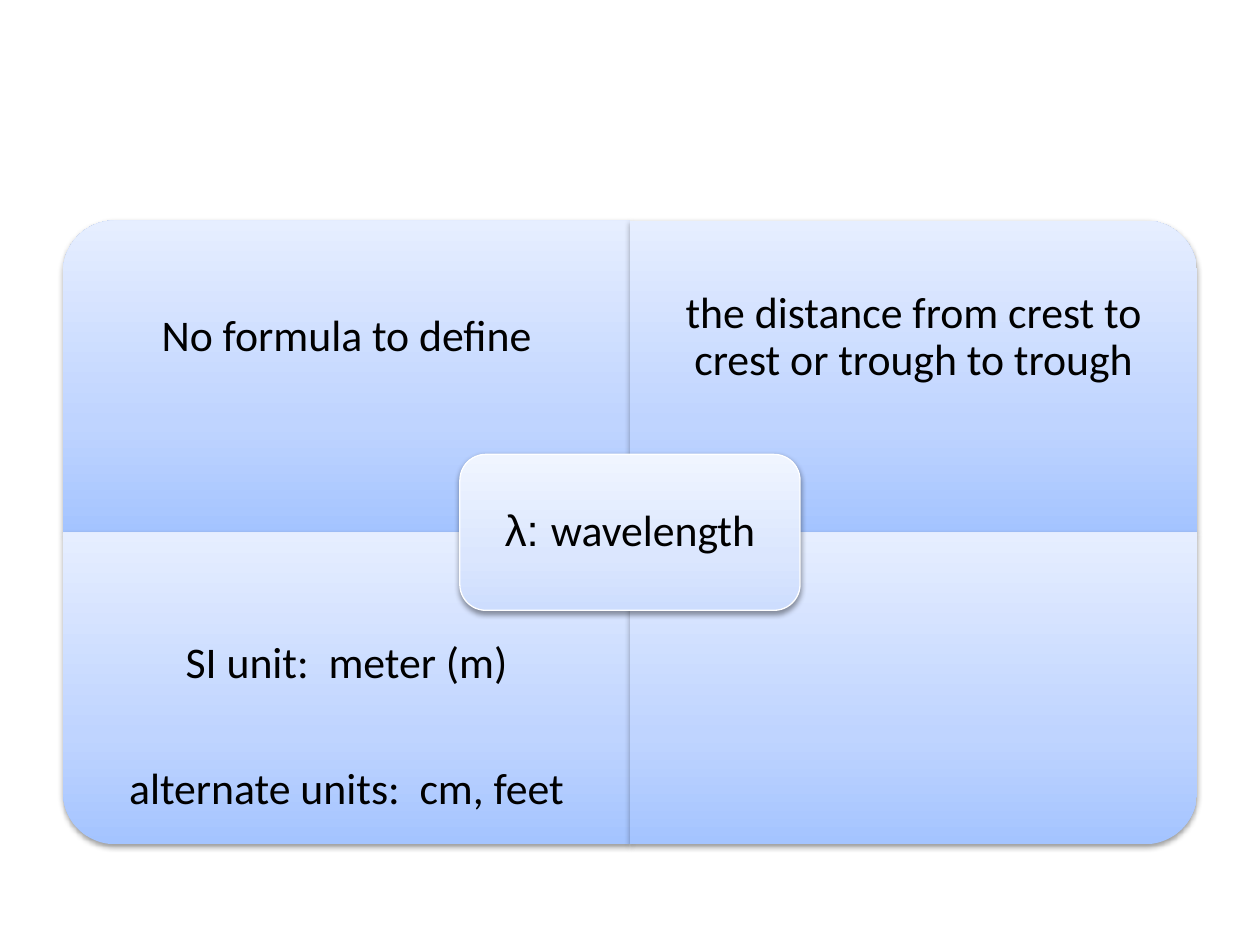
from copy import deepcopy

from lxml import etree
from pptx import Presentation
from pptx.dml.color import RGBColor
from pptx.enum.shapes import MSO_SHAPE
from pptx.enum.text import MSO_ANCHOR, PP_ALIGN
from pptx.oxml.ns import qn
from pptx.util import Pt

ROUND_ONE = MSO_SHAPE.ROUND_1_RECTANGLE
ROUND_ALL = MSO_SHAPE.ROUNDED_RECTANGLE
CENTER = PP_ALIGN.CENTER
MIDDLE = MSO_ANCHOR.MIDDLE

BLACK = RGBColor(0x00, 0x00, 0x00)
WHITE = RGBColor(0xFF, 0xFF, 0xFF)
QUADRANT_BLUES = [
    (0, RGBColor(0xA4, 0xC4, 0xFF)),
    (0.35, RGBColor(0xBF, 0xD4, 0xFF)),
    (1, RGBColor(0xE6, 0xEE, 0xFF)),
]
CENTER_BLUES = [
    (0, RGBColor(0xCD, 0xDD, 0xFE)),
    (0.35, RGBColor(0xDB, 0xE6, 0xFE)),
    (1, RGBColor(0xF0, 0xF5, 0xFF)),
]

QUADRANTS = [
    {"column": 0, "row": 0, "turn": 270, "lines": ["No formula to define"]},
    {"column": 1, "row": 0, "turn": 0,
     "lines": ["the distance from crest to crest or trough to trough"]},
    {"column": 0, "row": 1, "turn": 180,
     "lines": ["SI unit:  meter (m)", "alternate units:  cm, feet"]},
    {"column": 1, "row": 1, "turn": 90, "lines": []},
]
TERM = [("λ: ", "Arial"), ("wavelength", "Calibri")]

LEFT, TOP = 36, 126
QUADRANT_W, QUADRANT_H = 324, 178.2
TEXT_H = QUADRANT_H * 0.75
TERM_W, TERM_H = QUADRANT_W * 0.6, QUADRANT_H / 2


def write_text(frame, paragraphs, size=25, color=BLACK, inset=13.7, gap=44.5):
    frame.word_wrap = True
    frame.vertical_anchor = MIDDLE
    frame.margin_left = frame.margin_right = Pt(inset)
    frame.margin_top = frame.margin_bottom = Pt(inset)
    for index, runs in enumerate(paragraphs):
        paragraph = frame.add_paragraph() if index else frame.paragraphs[0]
        paragraph.alignment = CENTER
        paragraph.line_spacing = 0.9
        if index:
            paragraph.space_before = Pt(gap)
        for text, font_name in runs:
            run = paragraph.add_run()
            run.text = text
            run.font.name = font_name
            run.font.size = Pt(size)
            run.font.color.rgb = color


def add_panel(shapes, preset, left, top, width, height, blues):
    panel = shapes.add_shape(preset, Pt(left), Pt(top), Pt(width), Pt(height))
    panel.fill.gradient()
    panel.fill.gradient_angle = 90
    gradient = panel._element.spPr.find(qn("a:gradFill"))
    gradient.set("rotWithShape", "0")
    stop_list = gradient.find(qn("a:gsLst"))
    stop_list.append(deepcopy(stop_list[0]))
    for stop, (position, color) in zip(panel.fill.gradient_stops, blues):
        stop.position = position
        stop.color.rgb = color

    panel.shadow.inherit = False
    effects = panel._element.spPr.find(qn("a:effectLst"))
    shadow = etree.SubElement(
        effects, qn("a:outerShdw"), blurRad=str(Pt(3.15)), dist=str(Pt(1.57)),
        dir="5400000", rotWithShape="0")
    shade = etree.SubElement(shadow, qn("a:srgbClr"), val=str(BLACK))
    etree.SubElement(shade, qn("a:alpha"), val="38000")
    return panel


def add_quadrant(shapes, column, row, turn, lines):
    left = LEFT + column * QUADRANT_W
    top = TOP + row * QUADRANT_H
    width, height = QUADRANT_W, QUADRANT_H
    if turn % 180:
        width, height = height, width
    panel = add_panel(
        shapes, ROUND_ONE, left + (QUADRANT_W - width) / 2,
        top + (QUADRANT_H - height) / 2, width, height, QUADRANT_BLUES)
    panel.rotation = turn
    panel.line.fill.background()
    if lines:
        text_top = top + row * (QUADRANT_H - TEXT_H)
        label = shapes.add_textbox(
            Pt(left), Pt(text_top), Pt(QUADRANT_W), Pt(TEXT_H))
        write_text(label.text_frame, [[(line, "Calibri")] for line in lines])


def main():
    deck = Presentation()
    deck.slide_width, deck.slide_height = Pt(720), Pt(540)
    shapes = deck.slides.add_slide(deck.slide_layouts[6]).shapes
    for quadrant in QUADRANTS:
        add_quadrant(shapes, **quadrant)

    term = add_panel(
        shapes, ROUND_ALL, LEFT + QUADRANT_W - TERM_W / 2,
        TOP + QUADRANT_H - TERM_H / 2, TERM_W, TERM_H, CENTER_BLUES)
    term.line.color.rgb = WHITE
    term.line.width = Pt(0.75)
    write_text(term.text_frame, [TERM], inset=7.2)
    deck.save("out.pptx")


if __name__ == "__main__":
    main()
